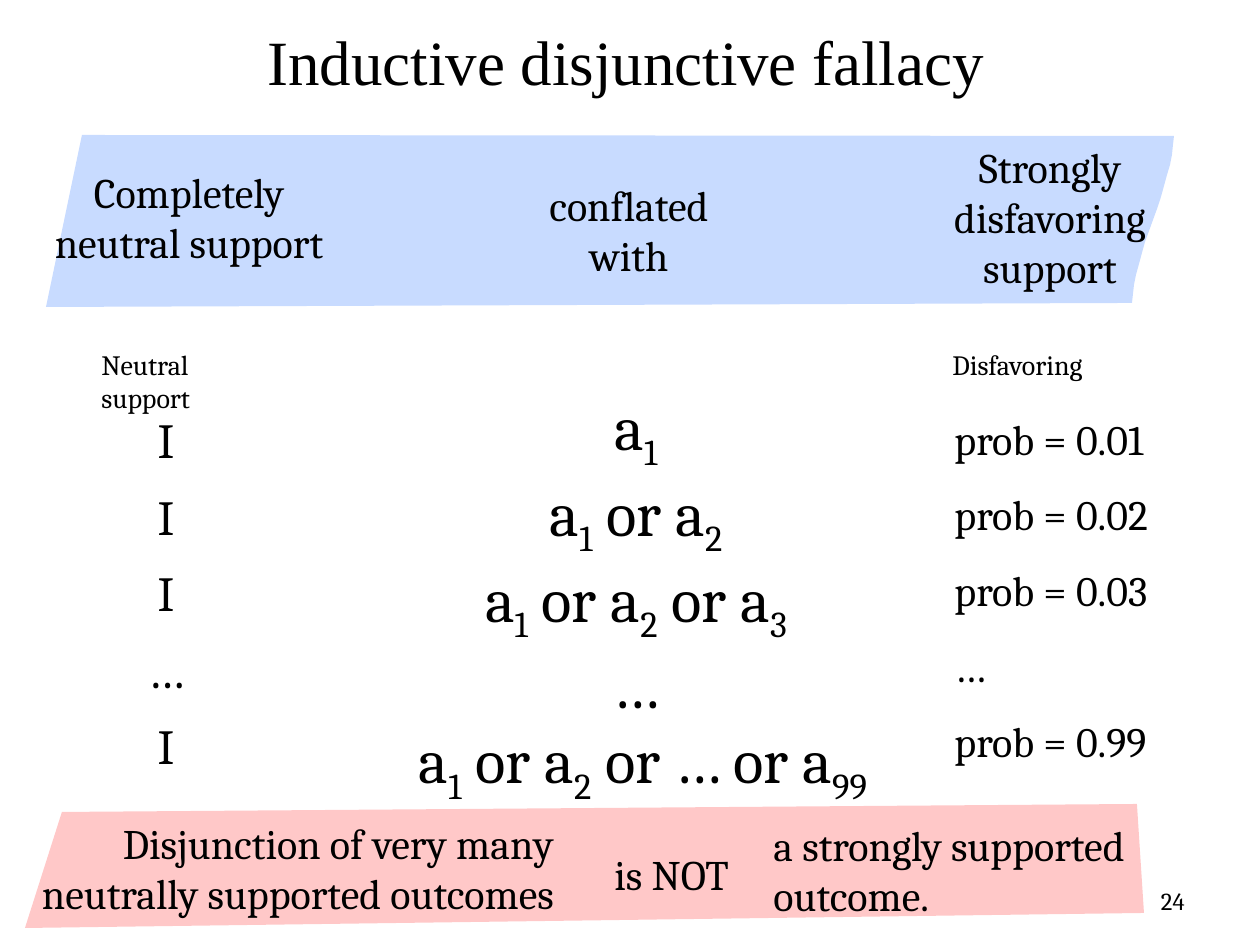
from itertools import groupby

from pptx import Presentation
from pptx.dml.color import RGBColor
from pptx.enum.text import MSO_ANCHOR, PP_ALIGN
from pptx.util import Pt

PX = 7257.14  # EMU per px, 126 px to the inch
LEFT, CENTER, RIGHT = PP_ALIGN.LEFT, PP_ALIGN.CENTER, PP_ALIGN.RIGHT
TOP, MIDDLE = MSO_ANCHOR.TOP, MSO_ANCHOR.MIDDLE
BLACK, BLUE, PINK = "000000", "C8DBFF", "FFC8C8"


def px(n):
    return round(n * PX)


def rgb(value):
    return RGBColor.from_string(value)


def add_band(s, points, color):
    """Filled polygon without an outline."""
    builder = s.shapes.build_freeform(*points[0], scale=PX)
    builder.add_line_segments(points[1:], close=True)
    sp = builder.convert_to_shape()
    sp.shadow.inherit = False
    sp.fill.solid()
    sp.fill.fore_color.rgb = rgb(color)
    sp.line.fill.background()


def curve(p0, p1, p2, p3, steps=16):
    """Points on a cubic Bezier curve."""
    def at(t, a, b, c, d):
        u = 1 - t
        return u**3 * a + 3 * u * u * t * b + 3 * u * t * t * c + t**3 * d

    return [tuple(round(at(i / steps, *axis)) for axis in zip(p0, p1, p2, p3))
            for i in range(steps + 1)]


def add_text(s, box, lines, size=24, align=LEFT, anchor=TOP, spacing=None,
             font="Cambria", subscripts=False):
    """Text box, one paragraph a line; digits may become subscripts."""
    tf = s.shapes.add_textbox(*map(px, box)).text_frame
    tf.word_wrap = True
    tf.vertical_anchor = anchor
    for i, line in enumerate(lines):
        p = tf.add_paragraph() if i else tf.paragraphs[0]
        p.alignment = align
        if spacing:
            p.line_spacing = spacing
        if subscripts:
            for is_index, chars in groupby(line, str.isdigit):
                r = p.add_run()
                r.text = "".join(chars)
                if is_index:
                    r._r.get_or_add_rPr().set("baseline", "-25000")
        else:
            p.text = line
        for r in p.runs:
            r.font.size = Pt(size)
            r.font.name = font
            r.font.color.rgb = rgb(BLACK)


def main():
    prs = Presentation()
    prs.slide_width, prs.slide_height = px(1260), px(945)
    s = prs.slides.add_slide(prs.slide_layouts[6])

    # Title and page number
    add_text(s, (255, 16, 750, 89), ["Inductive disjunctive fallacy"], 36,
             font="Times New Roman")
    add_text(s, (903, 876, 294, 50), ["24"], 14, RIGHT, MIDDLE)

    # Blue band: what is conflated with what
    right_edge = curve((1174, 136), (1173, 183), (1133, 257), (1132, 303))
    add_band(s, [(82, 135), *right_edge, (46, 307)], BLUE)
    add_text(s, (20, 98, 338, 238), ["Completely neutral support"],
             align=CENTER, anchor=MIDDLE)
    add_text(s, (510, 173, 238, 113), ["conflated with"], align=CENTER)
    add_text(s, (900, 135, 300, 165), ["Strongly disfavoring support"],
             align=CENTER)

    # Left column: neutral support
    add_text(s, (89, 341, 200, 47), ["Neutral support"], 16)
    add_text(s, (129, 386, 74, 396), ["I", "I", "I", "…", "I"], 28, CENTER,
             spacing=1.3)

    # Middle column: growing disjunctions
    disjunctions = [" or ".join(f"a{i}" for i in range(1, n + 1))
                    for n in (1, 2, 3)]
    add_text(s, (374, 381, 524, 391),
             [*disjunctions, "…", " a1 or a2 or … or a99"], 36, CENTER,
             subscripts=True)

    # Right column: probabilities
    add_text(s, (940, 341, 159, 47), ["Disfavoring"], 16)
    add_text(s, (942, 382, 221, 391),
             ["prob = 0.01", "prob = 0.02", "prob = 0.03", "…", "prob = 0.99"],
             spacing=1.5)

    # Pink band: conclusion
    add_band(s, [(62, 812), (1137, 804), (1144, 913), (25, 928)], PINK)
    add_text(s, (25, 811, 541, 113),
             ["Disjunction of very many neutrally supported outcomes"],
             align=RIGHT)
    add_text(s, (602, 842, 150, 63), ["is NOT"])
    add_text(s, (761, 813, 382, 113), ["a strongly supported outcome."])

    prs.save("out.pptx")


if __name__ == "__main__":
    main()
